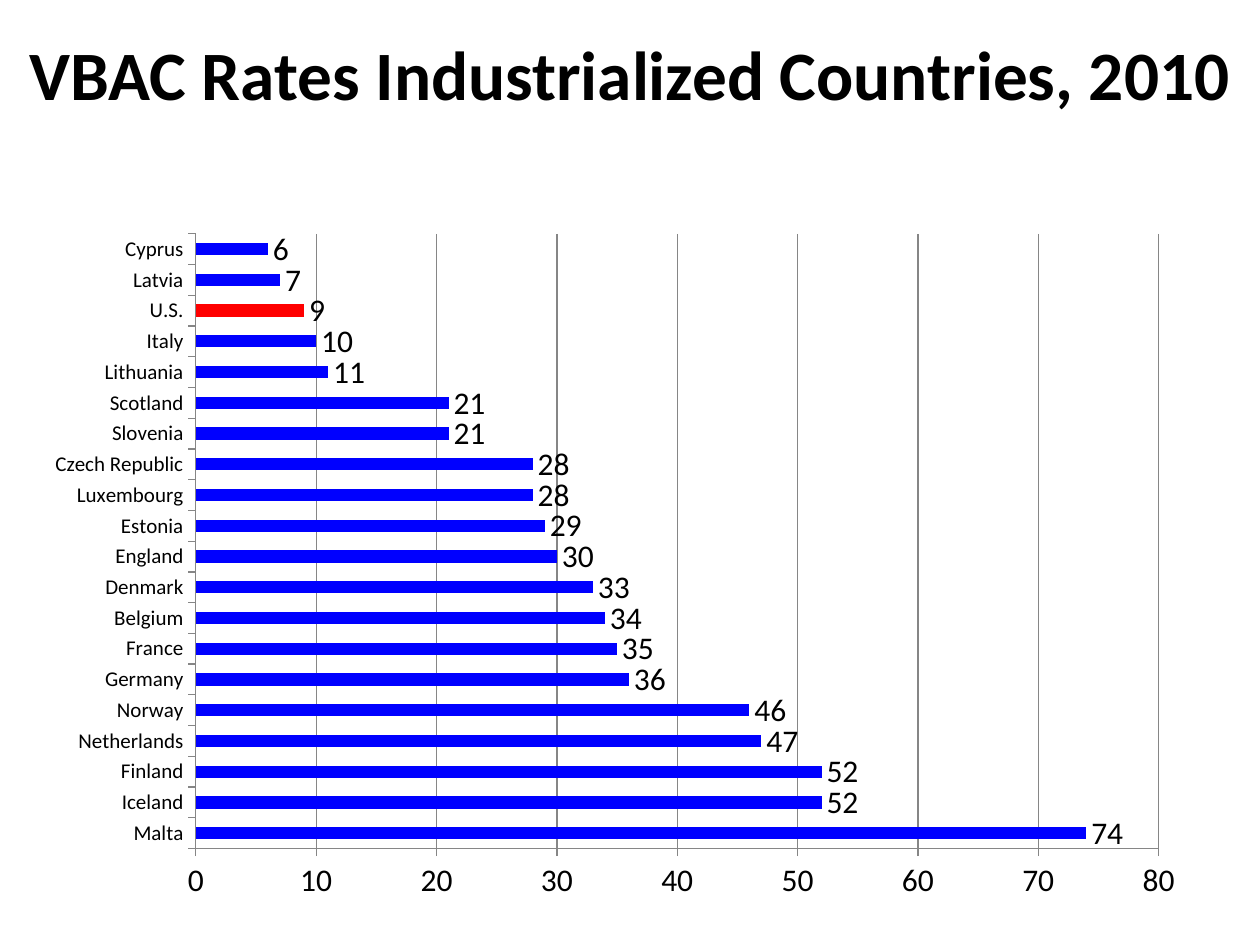
from pptx import Presentation
from pptx.chart.data import CategoryChartData
from pptx.dml.color import RGBColor
from pptx.enum.chart import XL_CHART_TYPE, XL_LABEL_POSITION, XL_TICK_MARK
from pptx.enum.text import MSO_ANCHOR, PP_ALIGN
from pptx.util import Emu, Pt

# Content
TITLE = "VBAC Rates Industrialized Countries, 2010"
RATES = {
    "Malta": 74, "Iceland": 52, "Finland": 52, "Netherlands": 47, "Norway": 46,
    "Germany": 36, "France": 35, "Belgium": 34, "Denmark": 33, "England": 30,
    "Estonia": 29, "Luxembourg": 28, "Czech Republic": 28, "Slovenia": 21,
    "Scotland": 21, "Lithuania": 11, "Italy": 10, "U.S.": 9, "Latvia": 7,
    "Cyprus": 6,
}
HIGHLIGHT = "U.S."
COLORS = {"text": "000000", "bar": "0000FF", "highlight": "FF0000", "line": "868686"}
FONT = "Calibri"
PX = 914400 / 126


def px(*lengths):
    return [Emu(round(length * PX)) for length in lengths]


def color(name):
    return RGBColor.from_string(COLORS[name])


def format_font(font, size, bold=False):
    font.name = FONT
    font.size = Pt(size)
    font.bold = bold
    font.color.rgb = color("text")


def write_text(shape, text, size, bold=False, align=PP_ALIGN.CENTER):
    frame = shape.text_frame
    frame.word_wrap = True
    frame.vertical_anchor = MSO_ANCHOR.MIDDLE
    paragraph = frame.paragraphs[0]
    paragraph.alignment = align
    run = paragraph.add_run()
    run.text = text
    format_font(run.font, size, bold)


def fill_solid(fill, name):
    fill.solid()
    fill.fore_color.rgb = color(name)


presentation = Presentation()
presentation.slide_width, presentation.slide_height = px(1260, 945)
slide = presentation.slides.add_slide(presentation.slide_layouts[5])

# Title
title = slide.shapes.title
title.left, title.top, title.width, title.height = px(0, 10, 1260, 126)
write_text(title, TITLE, 39.6, bold=True)

# Bar chart
data = CategoryChartData(number_format="0")
data.categories = list(RATES)
data.add_series("Series 1", list(RATES.values()))
chart = slide.shapes.add_chart(
    XL_CHART_TYPE.BAR_CLUSTERED, *px(32, 220, 1166, 693), data).chart
chart.has_legend = False
chart.has_title = False
format_font(chart.font, 18)

# Bars and value labels
plot = chart.plots[0]
plot.gap_width = 150
plot.vary_by_categories = False
series = plot.series[0]
series.invert_if_negative = False
fill_solid(series.format.fill, "bar")
point = series.points[list(RATES).index(HIGHLIGHT)]
fill_solid(point.format.fill, "highlight")
labels = series.data_labels
labels.show_value = True
labels.number_format = "0"
labels.number_format_is_linked = False
labels.position = XL_LABEL_POSITION.OUTSIDE_END
format_font(labels.font, 18)

# Axes
for axis, size in ((chart.category_axis, 12), (chart.value_axis, 18)):
    axis.major_tick_mark = XL_TICK_MARK.OUTSIDE
    axis.minor_tick_mark = XL_TICK_MARK.NONE
    axis.format.line.color.rgb = color("line")
    format_font(axis.tick_labels.font, size)
value_axis = chart.value_axis
value_axis.minimum_scale = 0
value_axis.maximum_scale = 80
value_axis.major_unit = 10
value_axis.tick_labels.number_format = "0"
value_axis.tick_labels.number_format_is_linked = False
value_axis.has_major_gridlines = True
value_axis.major_gridlines.format.line.color.rgb = color("line")

presentation.save("out.pptx")
